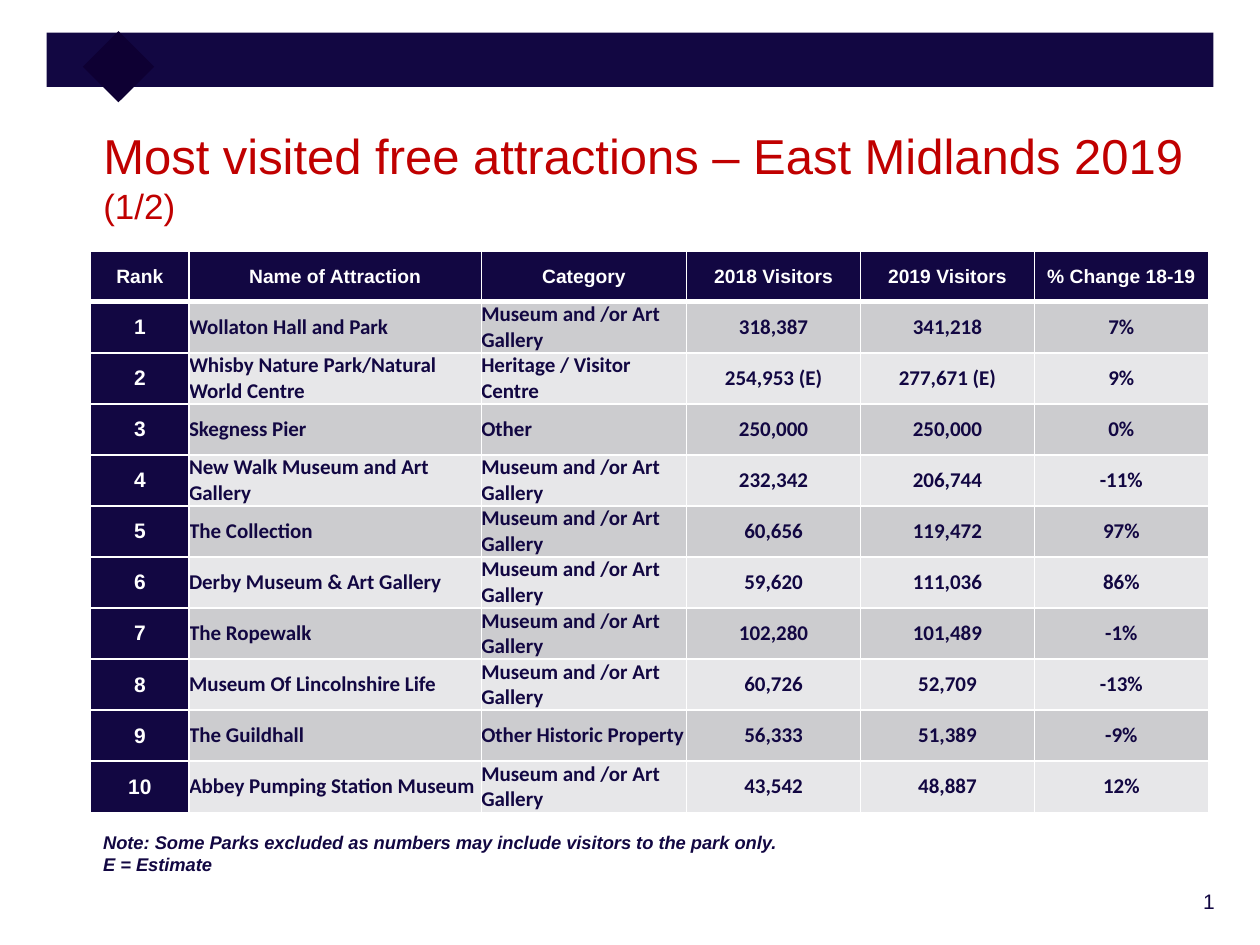
from lxml import etree
from pptx import Presentation
from pptx.dml.color import RGBColor
from pptx.enum.shapes import MSO_SHAPE
from pptx.enum.text import MSO_ANCHOR, PP_ALIGN
from pptx.oxml.ns import qn
from pptx.util import Inches, Pt

LEFT, CENTER, RIGHT = PP_ALIGN.LEFT, PP_ALIGN.CENTER, PP_ALIGN.RIGHT
TOP, MIDDLE = MSO_ANCHOR.TOP, MSO_ANCHOR.MIDDLE
RECTANGLE = MSO_SHAPE.RECTANGLE

COLORS = {"navy": "120742", "diamond": "0E0033", "red": "C00000",
          "white": "FFFFFF", "dark band": "CCCCCF", "light band": "E7E7E9"}

TITLE = [("Most visited free attractions – East Midlands 2019", 28), ("(1/2)", 20)]
NOTES = ["Note: Some Parks excluded as numbers may include visitors to the park only.",
         "E = Estimate"]
PAGE_NUMBER = "1"
MUSEUM = "Museum and /or Art Gallery"
HEADINGS = ["Rank", "Name of Attraction", "Category",
            "2018 Visitors", "2019 Visitors", "% Change 18-19"]
ATTRACTIONS = [
    ("Wollaton Hall and Park", MUSEUM, "318,387", "341,218", "7%"),
    ("Whisby Nature Park/Natural World Centre", "Heritage / Visitor Centre",
     "254,953 (E)", "277,671 (E)", "9%"),
    ("Skegness Pier", "Other", "250,000", "250,000", "0%"),
    ("New Walk Museum and Art Gallery", MUSEUM, "232,342", "206,744", "-11%"),
    ("The Collection", MUSEUM, "60,656", "119,472", "97%"),
    ("Derby Museum & Art Gallery", MUSEUM, "59,620", "111,036", "86%"),
    ("The Ropewalk", MUSEUM, "102,280", "101,489", "-1%"),
    ("Museum Of Lincolnshire Life", MUSEUM, "60,726", "52,709", "-13%"),
    ("The Guildhall", "Other Historic Property", "56,333", "51,389", "-9%"),
    ("Abbey Pumping Station Museum", MUSEUM, "43,542", "48,887", "12%"),
]
COLUMN_WIDTHS = [0.78, 2.32, 1.63, 1.38, 1.38, 1.38]
TABLE_LEFT, TABLE_TOP, TABLE_HEIGHT = 0.72, 1.99, 4.46

HEADING_FONT = {"size": Pt(11), "name": "Arial", "bold": True}
RANK_FONT = {**HEADING_FONT, "size": Pt(12)}
BODY_FONT = {**RANK_FONT, "name": "Calibri"}
NOTE_FONT = {**HEADING_FONT, "size": Pt(10.5), "italic": True}
NUMBER_FONT = {"size": Pt(12), "name": "Arial"}


def rgb(name):
    return RGBColor.from_string(COLORS[name])


def set_format(target, values):
    for key, value in values.items():
        setattr(target, key, value)


def format_font(font, values, color):
    set_format(font, values)
    font.color.rgb = rgb(color)


def add_block(page, place, color, rotation=0):
    block = page.shapes.add_shape(RECTANGLE, *map(Inches, place))
    block.shadow.inherit = False
    block.fill.solid()
    block.fill.fore_color.rgb = rgb(color)
    block.line.fill.background()
    block.rotation = rotation


def add_text(page, place, lines, font, align):
    box = page.shapes.add_textbox(*map(Inches, place))
    frame = box.text_frame
    set_format(frame, {"word_wrap": True, "vertical_anchor": TOP})
    frame.text = "\n".join(lines)
    for para in frame.paragraphs:
        para.alignment = align
        format_font(para.font, font, "navy")


def set_borders(cell, widths):
    """Draw white cell borders; widths maps L, R, T and B to points."""
    properties = cell._tc.get_or_add_tcPr()
    for index, side in enumerate("LRTB"):
        line = etree.Element(qn("a:ln" + side), w=str(Pt(widths[side])))
        fill = etree.SubElement(line, qn("a:solidFill"))
        etree.SubElement(fill, qn("a:srgbClr"), val=COLORS["white"])
        properties.insert(index, line)


def format_cell(cell, row, column):
    is_heading, is_rank = row == 0, column == 0
    if is_heading or is_rank:
        fill, color = "navy", "white"
        font = HEADING_FONT if is_heading else RANK_FONT
    else:
        fill = "dark band" if row % 2 else "light band"
        color, font = "navy", BODY_FONT
        set_format(cell, dict.fromkeys(
            ("margin_left", "margin_right", "margin_top", "margin_bottom"), 0))
    cell.vertical_anchor = MIDDLE
    cell.fill.solid()
    cell.fill.fore_color.rgb = rgb(fill)
    para = cell.text_frame.paragraphs[0]
    para.alignment = LEFT if column in (1, 2) and not is_heading else CENTER
    format_font(para.runs[0].font, font, color)
    set_borders(cell, {"L": 1, "R": 1, "T": 3 if row == 1 else 1,
                       "B": 3 if is_heading else 1})


def add_attractions(page):
    rows = [HEADINGS] + [(str(rank), *values)
                         for rank, values in enumerate(ATTRACTIONS, 1)]
    place = (TABLE_LEFT, TABLE_TOP, sum(COLUMN_WIDTHS), TABLE_HEIGHT)
    table = page.shapes.add_table(len(rows), len(HEADINGS), *map(Inches, place)).table
    for column, width in zip(table.columns, COLUMN_WIDTHS):
        column.width = Inches(width)
    for row, values in enumerate(rows):
        table.rows[row].height = Inches(TABLE_HEIGHT / len(rows))
        for column, value in enumerate(values):
            cell = table.cell(row, column)
            cell.text = value
            format_cell(cell, row, column)


def fill_title(title):
    left, top, width, height = map(Inches, (0.72, 0.95, 8.91, 0.89))
    set_format(title, {"left": left, "top": top, "width": width, "height": height})
    set_format(title.text_frame, {"word_wrap": True, "vertical_anchor": MIDDLE})
    para = title.text_frame.paragraphs[0]
    para.alignment = LEFT
    for index, (text, size) in enumerate(TITLE):
        if index:
            para.add_line_break()
        span = para.add_run()
        span.text = text
        format_font(span.font, {"size": Pt(size), "name": "Arial"}, "red")


def main():
    deck = Presentation()
    deck.slide_width, deck.slide_height = Inches(10), Inches(7.5)
    page = deck.slides.add_slide(deck.slide_layouts[5])
    add_text(page, (8.53, 7, 1.21, 0.36), [PAGE_NUMBER], NUMBER_FONT, RIGHT)
    add_block(page, (0.37, 0.26, 9.26, 0.43), "navy")
    add_block(page, (0.74, 0.33, 0.4, 0.4), "diamond", rotation=45)
    fill_title(page.shapes.title)
    add_attractions(page)
    add_text(page, (0.72, 6.55, 8.65, 0.45), NOTES, NOTE_FONT, LEFT)
    deck.save("out.pptx")


if __name__ == "__main__":
    main()
